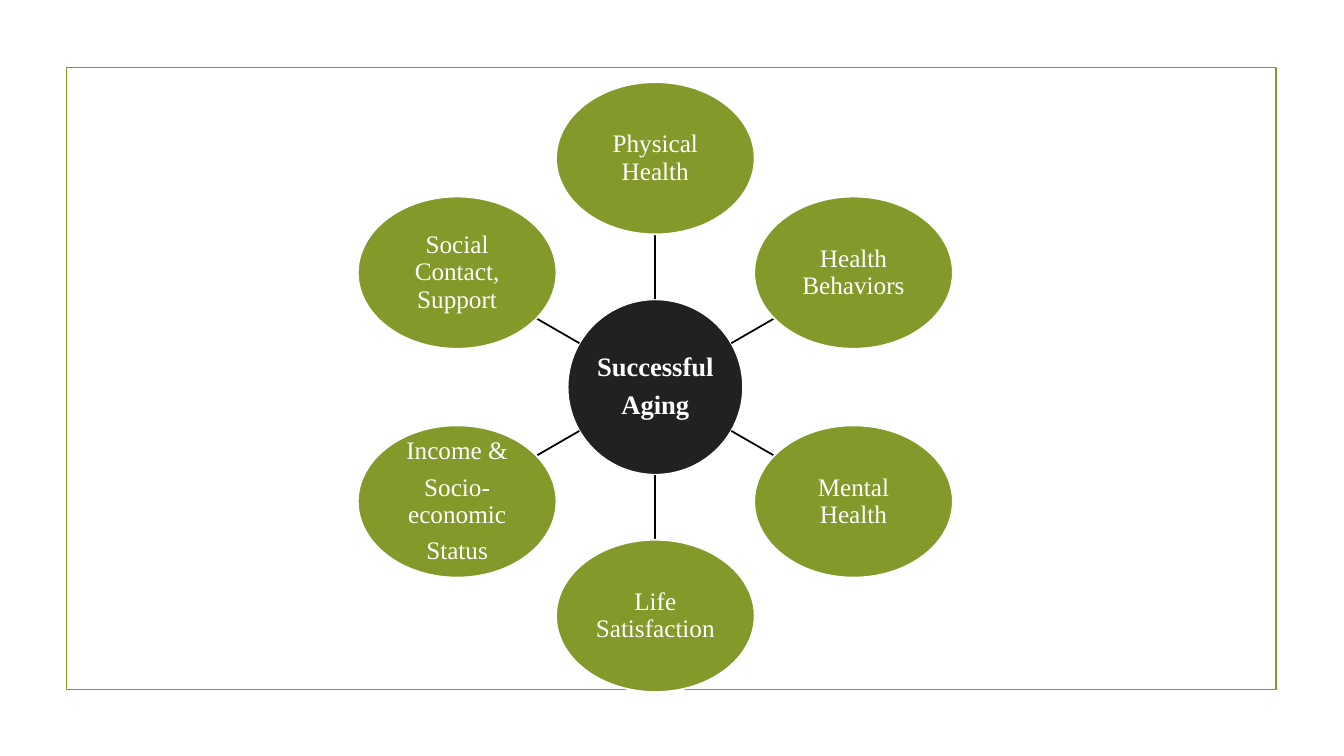
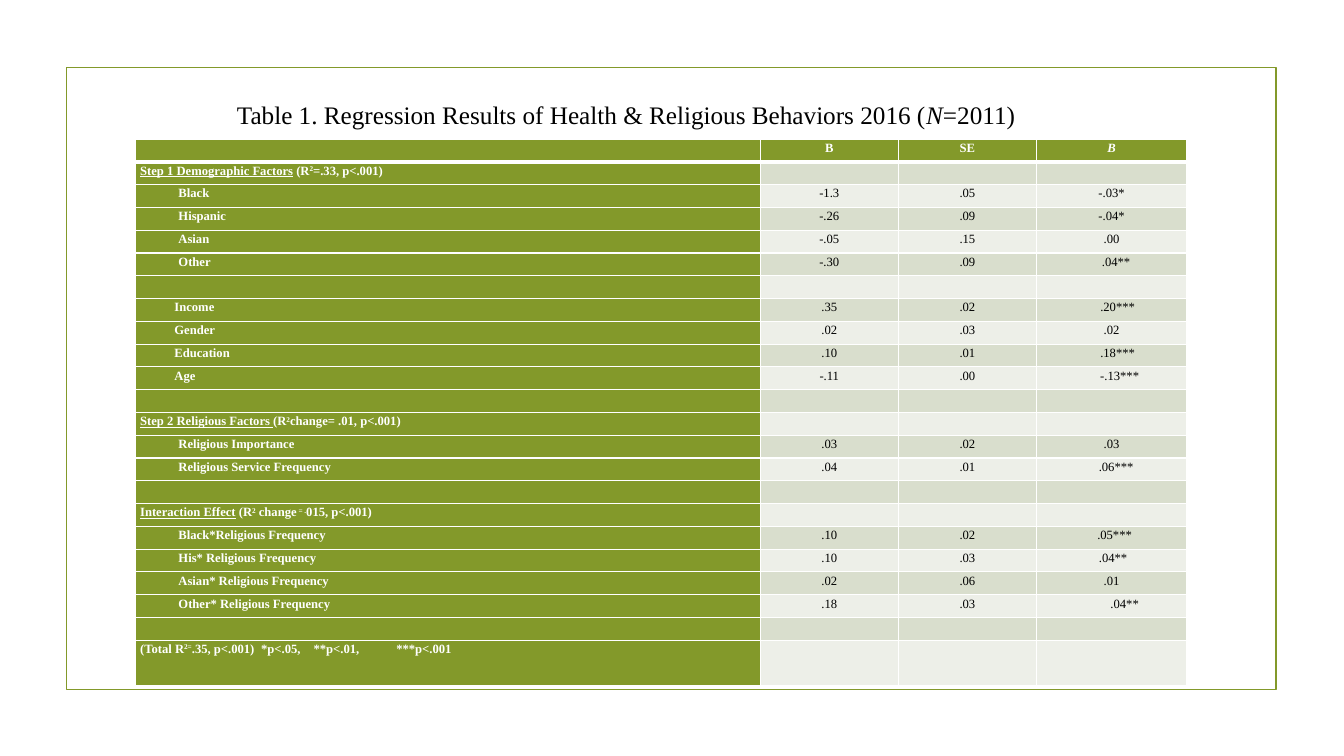
import math

import lxml.etree
import pptx
import pptx.dml.color
import pptx.enum.shapes
import pptx.enum.text
import pptx.oxml.ns
import pptx.util

Inches = pptx.util.Inches
Pt = pptx.util.Pt
RGBColor = pptx.dml.color.RGBColor
PP_ALIGN = pptx.enum.text.PP_ALIGN
MSO_ANCHOR = pptx.enum.text.MSO_ANCHOR
MSO_SHAPE = pptx.enum.shapes.MSO_SHAPE
qn = pptx.oxml.ns.qn

OLIVE = RGBColor(0x83, 0x99, 0x2A)
CHARCOAL = RGBColor(0x21, 0x21, 0x21)
WHITE = RGBColor(0xFF, 0xFF, 0xFF)
BLACK = RGBColor(0, 0, 0)
BANDS = (RGBColor(0xED, 0xEF, 0xE8), RGBColor(0xD9, 0xDE, 0xCD))
FONT = "Times New Roman"
LINE_WIDTH = Pt(1.25)

# Wheel of factors
HUB_X, HUB_Y, HUB_RADIUS = 6.5, 3.84, 0.87
ORBIT, FACTOR_W, FACTOR_H = 2.27, 1.97, 1.51
FACTORS = [
    ["Physical Health"],
    ["Health Behaviors"],
    ["Mental Health"],
    ["Life Satisfaction"],
    ["Income &", "Socio-economic", "Status"],
    ["Social Contact, Support"],
]

# Regression table
COLUMN_WIDTHS = (6.2, 1.37, 1.37, 1.49)
TABLE_HEIGHT = 5.43
DEEP, SHALLOW = 0.38, 0.34
NOTE_TABS = (1.2, 1.72, 2.54)
UNDERLINED = {"underline": True}
RAISED = {"baseline": 30000}
EMPTY_ROW = ([], 0, ())


def heading(*runs):
    return (list(runs), 0, ())


def result(label, indent, b, se, beta, nudge=0):
    """Row of coefficients; nudge is the left indent of the last value."""
    return ([(label, {})], indent, ((b, 0), (se, 0), (beta, nudge)))


ROWS = [
    heading(("Step 1 Demographic Factors", UNDERLINED), (" (R", {}),
            ("2", RAISED), ("=.33, p<.001)", {})),
    result("Black", DEEP, "-1.3", ".05", "-.03*"),
    result("Hispanic", DEEP, "-.26", ".09", "-.04*"),
    result("Asian", DEEP, "-.05", ".15", ".00"),
    result("Other", DEEP, "-.30", ".09", ".04**", 0.09),
    EMPTY_ROW,
    result("Income", SHALLOW, ".35", ".02", ".20***", 0.12),
    result("Gender", SHALLOW, ".02", ".03", ".02"),
    result("Education", SHALLOW, ".10", ".01", ".18***", 0.12),
    result("Age", SHALLOW, "-.11", ".00", "-.13***", 0.16),
    EMPTY_ROW,
    heading(("Step 2 Religious Factors ", UNDERLINED), ("(R", {}),
            ("2", RAISED), ("change= .01, p<.001)", {})),
    result("Religious Importance", DEEP, ".03", ".02", ".03"),
    result("Religious Service Frequency", DEEP, ".04", ".01", ".06***", 0.09),
    EMPTY_ROW,
    heading(("Interaction Effect", UNDERLINED), (" (R", {}), ("2", RAISED),
            (" change", {}), (" = .", RAISED), ("015, p<.001)", {})),
    result("Black*Religious Frequency", DEEP, ".10", ".02", ".05***", 0.06),
    result("His* Religious Frequency", DEEP, ".10", ".03", ".04**", 0.03),
    result("Asian* Religious Frequency", DEEP, ".02", ".06", ".01"),
    result("Other* Religious Frequency", DEEP, ".18", ".03", ".04**", 0.26),
    EMPTY_ROW,
    heading(("(Total R", {}), ("2=", RAISED),
            (".35, p<.001)\t*p<.05,\t**p<.01,\t***p<.001", {})),
]


def add_runs(p, runs, size, color, **common):
    """Add (text, format) runs that share size, colour and common formats."""
    for text, extra in runs:
        r = p.add_run()
        r.text = text
        formats = {"name": FONT, "size": Pt(size), **common, **extra}
        baseline = formats.pop("baseline", None)
        for name, value in formats.items():
            setattr(r.font, name, value)
        r.font.color.rgb = color
        if baseline:
            r.font._element.set("baseline", str(baseline))


def add_frame(prs, s):
    """Draw the border once and place it on the slide master."""
    frame = s.shapes.add_shape(MSO_SHAPE.RECTANGLE, Inches(0.66), Inches(0.67),
                               Inches(12), Inches(6.17))
    frame.shadow.inherit = False
    frame.fill.background()
    frame.line.color.rgb = OLIVE
    frame.line.width = LINE_WIDTH
    frame.element.nvSpPr.cNvPr.set("id", "20")
    prs.slide_master.shapes.element.append(frame.element)


def add_ellipse(s, x, y, width, height, fill, lines, size, bold=False):
    """Add an ellipse centred on x, y with one paragraph per line."""
    sp = s.shapes.add_shape(MSO_SHAPE.OVAL, Inches(x - width / 2),
                            Inches(y - height / 2), Inches(width), Inches(height))
    sp.shadow.inherit = False
    sp.fill.solid()
    sp.fill.fore_color.rgb = fill
    sp.line.color.rgb = WHITE
    sp.line.width = LINE_WIDTH
    tf = sp.text_frame
    tf.word_wrap = True
    tf.vertical_anchor = MSO_ANCHOR.MIDDLE
    for side in ("left", "top", "right", "bottom"):
        setattr(tf, f"margin_{side}", Inches(0.01))
    for i, line in enumerate(lines):
        p = tf.add_paragraph() if i else tf.paragraphs[0]
        p.alignment = PP_ALIGN.CENTER
        p.line_spacing = 0.9
        p.space_after = Pt(0.35 * size)
        add_runs(p, [(line, {})], size, WHITE, bold=bold)


def add_spoke(s, dx, dy):
    """Join the hub to the factor that lies in direction dx, dy."""
    factor_reach = 1 / math.hypot(dx / (FACTOR_W / 2), dy / (FACTOR_H / 2))
    ends = [Inches(start + step * distance)
            for distance in (HUB_RADIUS, ORBIT - factor_reach)
            for start, step in ((HUB_X, dx), (HUB_Y, dy))]
    spoke = s.shapes.add_connector(pptx.enum.shapes.MSO_CONNECTOR.STRAIGHT, *ends)
    spoke.line.color.rgb = BLACK
    spoke.line.width = LINE_WIDTH
    lxml.etree.SubElement(spoke.element.spPr, qn("a:effectLst"))


def add_wheel(s):
    add_ellipse(s, HUB_X, HUB_Y, 2 * HUB_RADIUS, 2 * HUB_RADIUS, CHARCOAL,
                ["Successful", "Aging"], 19, bold=True)
    for i, lines in enumerate(FACTORS):
        angle = math.tau * i / len(FACTORS)
        dx, dy = math.sin(angle), -math.cos(angle)
        add_spoke(s, dx, dy)
        add_ellipse(s, HUB_X + ORBIT * dx, HUB_Y + ORBIT * dy,
                    FACTOR_W, FACTOR_H, OLIVE, lines, 18)


def set_borders(cell, bottom_width):
    tcPr = cell._tc.get_or_add_tcPr()
    widths = {"L": 1, "R": 1, "T": 1, "B": bottom_width}
    for i, (side, width) in enumerate(widths.items()):
        ln = lxml.etree.Element(qn(f"a:ln{side}"), w=str(Pt(width)))
        fill = lxml.etree.SubElement(ln, qn("a:solidFill"))
        lxml.etree.SubElement(fill, qn("a:srgbClr"), val=str(WHITE))
        tcPr.insert(i, ln)


def fill_cell(cell, runs, fill, color, bold, centred, indent=0, bottom_width=1):
    cell.fill.solid()
    cell.fill.fore_color.rgb = fill
    set_borders(cell, bottom_width)
    cell.margin_left = cell.margin_right = Inches(0.05)
    cell.margin_top = cell.margin_bottom = 0
    p = cell.text_frame.paragraphs[0]
    p.alignment = PP_ALIGN.CENTER if centred else PP_ALIGN.LEFT
    p.line_spacing = 1.15
    pPr = p._p.get_or_add_pPr()
    pPr.set("marL", str(Inches(indent)))
    if any("\t" in text for text, _ in runs):
        tabs = lxml.etree.SubElement(pPr, qn("a:tabLst"))
        for stop in NOTE_TABS:
            lxml.etree.SubElement(tabs, qn("a:tab"), pos=str(Inches(stop)), algn="l")
    add_runs(p, runs, 9, color, bold=bold)
    if not runs:
        lxml.etree.SubElement(p._p, qn("a:endParaRPr"), sz="900")


def add_regression_table(s):
    table = s.shapes.add_table(
        len(ROWS) + 1, len(COLUMN_WIDTHS), Inches(1.34), Inches(1.38),
        Inches(sum(COLUMN_WIDTHS)), Inches(TABLE_HEIGHT)).table
    table.first_col = True
    for column, width in zip(table.columns, COLUMN_WIDTHS):
        column.width = Inches(width)
    row_height = TABLE_HEIGHT / (len(ROWS) + 2)
    for row in table.rows:
        row.height = Inches(row_height)
    table.rows[len(ROWS)].height = Inches(2 * row_height)

    headers = [[], [("B", {})], [("SE", {})], [("B", {"italic": True})]]
    for c, runs in enumerate(headers):
        fill_cell(table.cell(0, c), runs, OLIVE, WHITE, True, True, bottom_width=3)
    for r, (label, indent, values) in enumerate(ROWS, 1):
        fill_cell(table.cell(r, 0), label, OLIVE, WHITE, True, False, indent)
        for c in range(1, len(COLUMN_WIDTHS)):
            text, nudge = values[c - 1] if values else ("", 0)
            runs = [(text, {})] if text else []
            fill_cell(table.cell(r, c), runs, BANDS[r % 2], BLACK, False, True, nudge)


def set_title(s, runs):
    title = s.shapes.title
    box = {"left": 2.25, "top": 0.89, "width": 9.06, "height": 0.43}
    for name, value in box.items():
        setattr(title, name, Inches(value))
    tf = title.text_frame
    tf.word_wrap = True
    tf.auto_size = pptx.enum.text.MSO_AUTO_SIZE.NONE
    tf.vertical_anchor = MSO_ANCHOR.TOP
    p = tf.paragraphs[0]
    p.alignment = PP_ALIGN.LEFT
    p.line_spacing = 1.15
    add_runs(p, runs, 18, BLACK)


def main():
    prs = pptx.Presentation()
    prs.slide_width, prs.slide_height = Inches(13.33), Inches(7.5)
    title_only, blank = prs.slide_layouts[5], prs.slide_layouts[6]

    s = prs.slides.add_slide(blank)
    add_frame(prs, s)
    add_wheel(s)

    s = prs.slides.add_slide(title_only)
    add_regression_table(s)
    set_title(s, [
        ("Table 1. Regression Results of Health & Religious Behaviors 2016 (", {}),
        ("N", {"italic": True}), ("=2011)", {})])

    prs.save("out.pptx")


if __name__ == "__main__":
    main()
